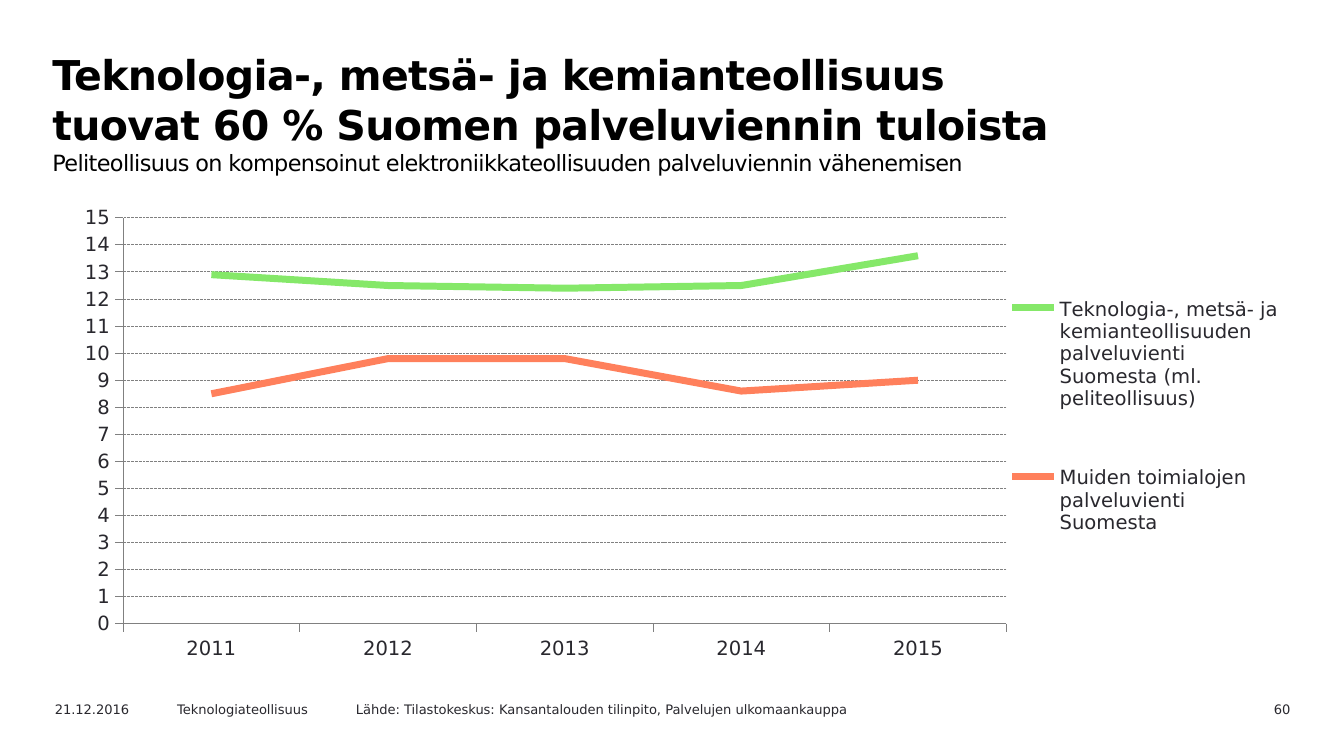
from dataclasses import dataclass
from typing import Any

from lxml.etree import SubElement
from pptx import Presentation
from pptx.chart.data import CategoryChartData
from pptx.dml.color import RGBColor
from pptx.enum.chart import XL_CHART_TYPE, XL_LEGEND_POSITION, XL_TICK_MARK
from pptx.enum.dml import MSO_LINE
from pptx.enum.text import PP_ALIGN
from pptx.oxml.ns import qn
from pptx.util import Inches, Pt

WIDE = Inches(10)
HIGH = WIDE * 9 // 16
BLACK = RGBColor(0x00, 0x00, 0x00)
INK = RGBColor(0x29, 0x28, 0x2E)
GRAY = RGBColor(0x80, 0x80, 0x80)
GREEN = RGBColor(0x85, 0xE8, 0x69)
CORAL = RGBColor(0xFF, 0x80, 0x5C)
FACE = "DejaVu Sans"
SMALL = {"size": Pt(7), "name": FACE}
HEAD = {"size": Pt(22), "name": FACE, "bold": True}
SUB = {"size": Pt(12), "name": FACE, "bold": False}
LABEL = {"size": Pt(10.5), "name": FACE, "bold": False}
SCALE = {"minimum_scale": 0, "maximum_scale": 15, "major_unit": 1}
TIGHT = -33


@dataclass
class Box:
    """Place and size in percent of the whole."""
    left: float
    top: float
    width: float
    height: float

    def lengths(self) -> tuple[int, int, int, int]:
        """Return the box in slide units."""
        return (int(WIDE * self.left / 100), int(HIGH * self.top / 100),
                int(WIDE * self.width / 100), int(HIGH * self.height / 100))


@dataclass
class Note:
    """One footer text."""
    text: str
    left: float
    width: float
    align: Any = PP_ALIGN.LEFT


@dataclass
class Trend:
    """One line of the chart."""
    name: str
    values: tuple[float, ...]
    color: RGBColor


NOTES = (
    Note("21.12.2016", 3.1, 10),
    Note("Teknologiateollisuus", 12.2, 14.2),
    Note("Lähde: Tilastokeskus: Kansantalouden tilinpito, Palvelujen ulkomaankauppa", 25.5, 44.3),
    Note("60", 87.6, 9.4, PP_ALIGN.RIGHT),
)
YEARS = ("2011", "2012", "2013", "2014", "2015")
TRENDS = (
    Trend("Teknologia-, metsä- ja kemianteollisuuden palveluvienti Suomesta (ml. peliteollisuus)",
          (12.9, 12.5, 12.4, 12.5, 13.6), GREEN),
    Trend("Muiden toimialojen palveluvienti Suomesta ", (8.5, 9.8, 9.8, 8.6, 9), CORAL),
)


def style(font: Any, values: dict[str, Any], color: RGBColor) -> None:
    """Set font values and colour."""
    for key, value in values.items():
        setattr(font, key, value)
    font.color.rgb = color


def write(para: Any, text: str, values: dict[str, Any], color: RGBColor, space: int = 0) -> None:
    """Fill a paragraph with styled text."""
    para.text = text
    for run in para.runs:
        style(run.font, values, color)
        if space:
            run._r.get_or_add_rPr().set("spc", str(space))


def frame(slide: Any, box: Box) -> Any:
    """Add a wrapping text box and return its text frame."""
    text = slide.shapes.add_textbox(*box.lengths()).text_frame
    text.word_wrap = True
    return text


def title(slide: Any) -> None:
    """Draw the heading and its subtitle."""
    text = frame(slide, Box(2.8, 5.5, 87.4, 12.6))
    text.margin_left = Inches(0.11)
    head = text.paragraphs[0]
    write(head, "Teknologia-, metsä- ja kemianteollisuus \vtuovat 60 % Suomen palveluviennin tuloista",
          HEAD, BLACK, TIGHT)
    head.line_spacing = Pt(27)
    write(text.add_paragraph(),
          "Peliteollisuus on kompensoinut elektroniikkateollisuuden palveluviennin vähenemisen",
          SUB, BLACK, TIGHT)


def footer(slide: Any, note: Note) -> None:
    """Draw one footer text."""
    para = frame(slide, Box(note.left, 91.9, note.width, 3.2)).paragraphs[0]
    para.alignment = note.align
    write(para, note.text, SMALL, INK)


def layout(part: Any, box: Box, inner: bool) -> None:
    """Fix a chart part at percents of the chart's size."""
    for old in part.findall(qn("c:layout")):
        part.remove(old)
    node = SubElement(part, qn("c:layout"))
    part.insert(1 if part.tag == qn("c:legend") else 0, node)
    fixed = SubElement(node, qn("c:manualLayout"))
    if inner:
        SubElement(fixed, qn("c:layoutTarget")).set("val", "inner")
    for name in ("xMode", "yMode"):
        SubElement(fixed, qn(f"c:{name}")).set("val", "edge")
    for name, share in zip("xywh", (box.left, box.top, box.width, box.height)):
        SubElement(fixed, qn(f"c:{name}")).set("val", str(share / 100))


def graph(slide: Any) -> None:
    """Draw the line chart of service exports."""
    data = CategoryChartData()
    data.categories = YEARS
    for trend in TRENDS:
        data.add_series(trend.name, trend.values)
    chart = slide.shapes.add_chart(XL_CHART_TYPE.LINE, *Box(4.2, 26.13, 91.8, 64.18).lengths(), data).chart
    chart.has_title = False
    style(chart.font, {"size": Pt(10), "name": "Arial Narrow"}, INK)
    chart.plots[0].vary_by_categories = False
    for line, trend in zip(chart.plots[0].series, TRENDS):
        line.smooth = False
        line.format.line.width = Pt(3.75)
        line.format.line.color.rgb = trend.color
    for axis in (chart.category_axis, chart.value_axis):
        style(axis.tick_labels.font, LABEL, INK)
        axis.major_tick_mark = XL_TICK_MARK.OUTSIDE
        axis.format.line.color.rgb = GRAY
        axis.format.line.width = Pt(0.5)
    scale = chart.value_axis
    for key, value in SCALE.items():
        setattr(scale, key, value)
    scale.tick_labels.number_format = "General"
    scale.tick_labels.number_format_is_linked = False
    grid = scale.major_gridlines.format.line
    grid.color.rgb = GRAY
    grid.width = Pt(0.5)
    grid.dash_style = MSO_LINE.SQUARE_DOT
    chart.has_legend = True
    legend = chart.legend
    legend.position = XL_LEGEND_POSITION.RIGHT
    legend.include_in_layout = False
    style(legend.font, LABEL, INK)
    layout(chart.plots[0]._element.getparent(), Box(5.4, 4.2, 71.6, 83.7), True)
    layout(legend._element, Box(78, 9, 22, 72), False)


def main() -> None:
    """Build and save the slide."""
    deck = Presentation()
    deck.slide_width, deck.slide_height = WIDE, HIGH
    slide = deck.slides.add_slide(deck.slide_layouts[6])
    for note in NOTES:
        footer(slide, note)
    title(slide)
    graph(slide)
    deck.save("out.pptx")


if __name__ == "__main__":
    main()
